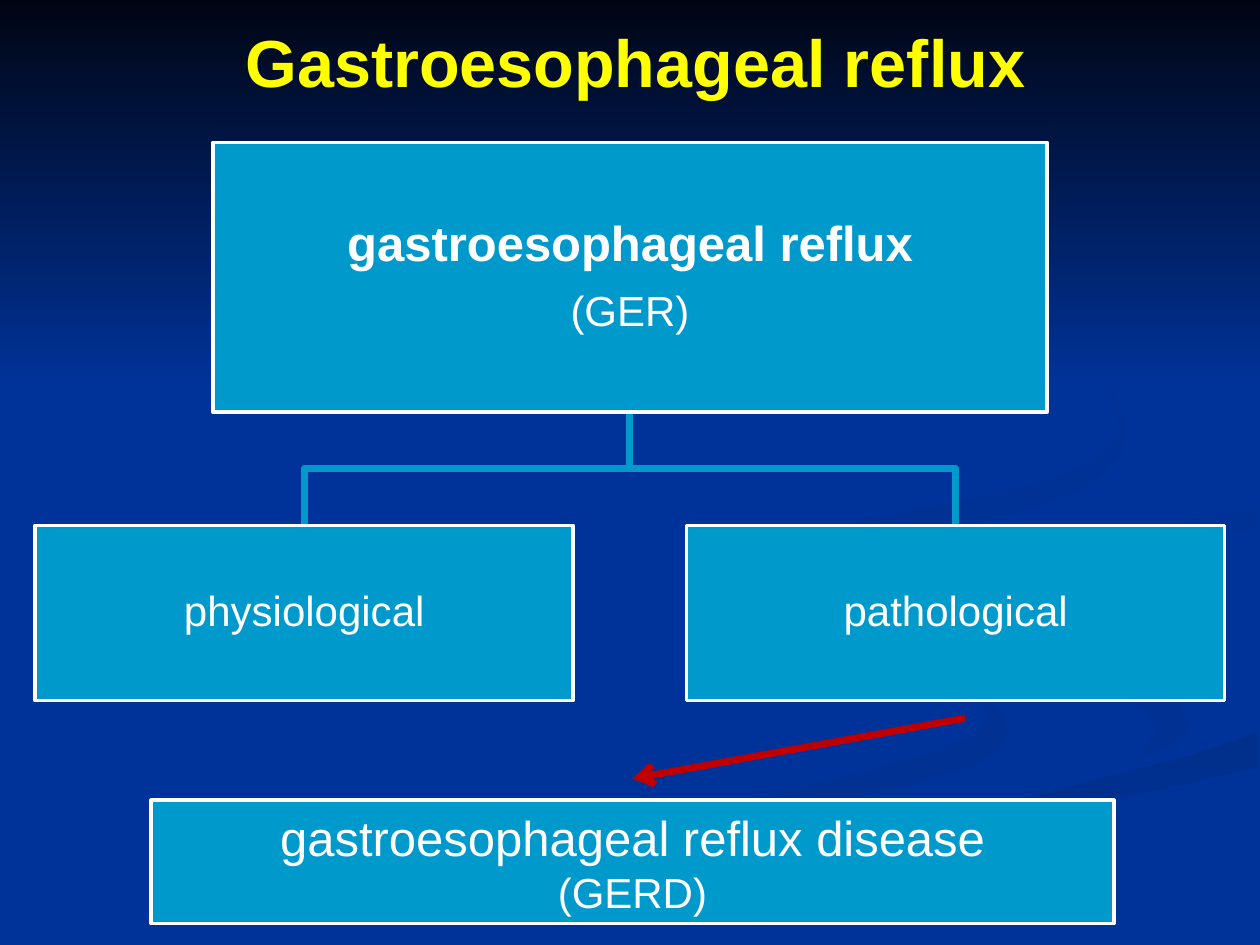
from dataclasses import dataclass

from lxml import etree
from pptx import Presentation
from pptx import util as u
from pptx.dml.color import RGBColor
from pptx.enum import shapes, text
from pptx.oxml.ns import qn


@dataclass(frozen=True)
class Theme:
    font: str = "Arial"
    backdrop: str = "003399"
    box: str = "0099CC"
    light: str = "FFFFFF"
    title: str = "FFFF00"
    arrow: str = "C00000"
    title_size: int = 38
    large: int = 28
    normal: int = 24
    border: int = 2
    thick: int = 4


COLUMNS, ROWS = 100, 75

# Each band: first colour, last colour, angle, outline in columns and rows
BANDS = [
    ("003399", "003193", 0, [
        (78.1, 55.3), (74.5, 53.8), (68.2, 51.9), (62.6, 50.2), (59.4, 48.5),
        (57.6, 46.9), (57.5, 45.9), (57, 47.2), (58.1, 48.4), (61.1, 49.9),
        (67.9, 51.9), (74.1, 53.9), (77.6, 55.3), (78.6, 56.6), (77.4, 58.3),
        (73.9, 59.8), (68.4, 61.3), (57.9, 63.9), (45.8, 67.4), (37.6, 70.7),
        (30, 74.9), (36.1, 74.9), (43.1, 71.4), (53.2, 67.4), (62.3, 64.7),
        (72.1, 62.3), (76.9, 60.9), (79.1, 59.7), (80, 58.1), (79.5, 56.7)]),
    ("003399", "003193", 45, [
        (94.3, 57), (93, 55.3), (90.5, 54), (85, 52.4), (79.2, 50.9),
        (74.5, 49), (72.7, 47.4), (72.4, 46.4), (73.3, 48.8), (75.5, 50.5),
        (79.7, 52.4), (85.4, 53.9), (89.2, 55.3), (91.1, 56.7), (91.8, 58.1),
        (90.7, 59.7), (89.4, 60.5), (92.5, 59.3), (94.1, 58.1)]),
    ("002F8C", "003399", 90, [
        (50.3, 74.9), (57.1, 74.9), (61.4, 72.6), (67, 70.2), (75.2, 67.2),
        (86.1, 64), (99.8, 60.9), (99.8, 58.1), (95, 59.8), (86.7, 62),
        (76.4, 64.7), (66.2, 68.1), (56.9, 71.9), (51.9, 74.7)]),
    ("003091", "003399", 45, [
        (78.1, 46), (78.2, 46.9), (79.7, 48.3), (82.6, 49.6), (80.9, 48.4),
        (80.5, 47.2), (81.6, 45.9), (84.3, 44.8), (89.6, 43.5), (95.4, 42.6),
        (99.8, 42), (99.8, 40.2), (93.3, 41.5), (86.5, 42.4), (81, 43.7)]),
    ("002F8E", "003399", 45, [
        (68.3, 43), (76.4, 41.7), (82.5, 40.2), (86.7, 38.4), (88.9, 36.2),
        (89.3, 33.5), (88, 30.7), (85.4, 28.3), (81, 25.6), (76.2, 23.3),
        (82.6, 26.6), (87, 29.9), (88.8, 32.8), (88.6, 34.8), (86.1, 37),
        (81.8, 38.6), (73.3, 40.4), (64.9, 42), (59.7, 43.7), (57.7, 46.2),
        (59, 48.4), (62.2, 50), (59.7, 48), (59.4, 46.5), (61.4, 44.8)]),
    ("000514", "003399", 90, [(0, 0), (100, 0), (100, 30.8), (0, 30.8)]),
]


class SlideBuilder:
    def __init__(self, deck, theme):
        self.theme = theme
        self.unit_x = deck.slide_width / COLUMNS
        self.unit_y = deck.slide_height / ROWS
        self.slide = deck.slides.add_slide(deck.slide_layouts[5])
        self.shapes = self.slide.shapes

    def point(self, column, row):
        return round(column * self.unit_x), round(row * self.unit_y)

    def area(self, column, row, width, height):
        return *self.point(column, row), *self.point(width, height)

    def outline(self, points, close):
        start, *rest = [self.point(*point) for point in points]
        pen = self.shapes.build_freeform(*start)
        pen.add_line_segments(rest, close=close)
        shape = pen.convert_to_shape()
        shape.shadow.inherit = False
        return shape

    def stroke(self, shape, color, width):
        shape.line.color.rgb = RGBColor.from_string(color)
        shape.line.width = u.Pt(width)

    def background(self, bands):
        fill = self.slide.background.fill
        fill.solid()
        fill.fore_color.rgb = RGBColor.from_string(self.theme.backdrop)
        for first, last, angle, points in bands:
            band = self.outline(points, close=True)
            band.line.fill.background()
            band.fill.gradient()
            band.fill.gradient_angle = -angle % 360
            for stop, color in zip(band.fill.gradient_stops, (first, last)):
                stop.color.rgb = RGBColor.from_string(color)

    def set_text(self, frame, lines, color, tight=False):
        """Fill a frame with (wording, size, bold) lines, centred."""
        frame.word_wrap = True
        frame.auto_size = text.MSO_AUTO_SIZE.NONE
        frame.vertical_anchor = text.MSO_ANCHOR.MIDDLE
        if tight:
            for side in ("left", "right", "top", "bottom"):
                setattr(frame, f"margin_{side}", u.Inches(0.02))
        for index, (wording, size, bold) in enumerate(lines):
            para = frame.add_paragraph() if index else frame.paragraphs[0]
            layout = {"alignment": text.PP_ALIGN.CENTER}
            if tight:
                layout |= {"line_spacing": 0.9, "space_after": u.Pt(round(size * 0.35))}
            for name, value in layout.items():
                setattr(para, name, value)
            span = para.add_run()
            span.text = wording
            style = {"name": self.theme.font, "size": u.Pt(size), "bold": bold}
            for name, value in style.items():
                setattr(span.font, name, value)
            span.font.color.rgb = RGBColor.from_string(color)

    def title(self, wording, *area):
        """Place the title in front of everything drawn so far."""
        title = self.shapes.title
        title.left, title.top, title.width, title.height = self.area(*area)
        tree = title.element.getparent()
        tree.append(title.element)
        self.set_text(title.text_frame, [(wording, self.theme.title_size, True)],
                      self.theme.title)

    def box(self, lines, *area, tight=True):
        box = self.shapes.add_shape(shapes.MSO_SHAPE.RECTANGLE, *self.area(*area))
        box.shadow.inherit = False
        box.fill.solid()
        box.fill.fore_color.rgb = RGBColor.from_string(self.theme.box)
        self.stroke(box, self.theme.light, self.theme.border)
        self.set_text(box.text_frame, lines, self.theme.light, tight)

    def branch(self, start, end):
        """Draw a line going down, across and down again."""
        middle = (start[1] + end[1]) / 2
        points = [start, (start[0], middle), (end[0], middle), end]
        branch = self.outline(points, close=False)
        branch.fill.background()
        self.stroke(branch, self.theme.box, self.theme.thick)

    def arrow(self, start, end):
        arrow = self.shapes.add_connector(
            shapes.MSO_CONNECTOR.STRAIGHT, *self.point(*start), *self.point(*end))
        self.stroke(arrow, self.theme.arrow, self.theme.thick)
        properties = arrow.element.spPr
        etree.SubElement(properties.find(qn("a:ln")), qn("a:tailEnd"), type="arrow")
        etree.SubElement(properties, qn("a:effectLst"))


def main():
    deck = Presentation()
    deck.slide_width, deck.slide_height = u.Inches(10), u.Inches(7.5)
    theme = Theme()
    page = SlideBuilder(deck, theme)
    page.background(BANDS)
    page.title("Gastroesophageal reflux", 2, 1.3, 96.9, 7.1)

    root_top, root_height, child_top = 11.3, 21.4, 41.7
    child_width, child_height = 42.7, 13.9
    children = {"pathological": 54.5, "physiological": 2.8}
    for left in children.values():
        page.branch((50, root_top + root_height), (left + child_width / 2, child_top))
    page.box([("gastroesophageal reflux", theme.large, True),
              ("(GER)", theme.normal, False)], 16.9, root_top, 66.2, root_height)
    for wording, left in children.items():
        page.box([(wording, theme.normal, False)],
                 left, child_top, child_width, child_height)
    page.box([("gastroesophageal reflux disease", theme.large, False),
              ("(GERD)", theme.normal, False)], 12, 63.5, 76.4, 9.8, tight=False)
    page.arrow((76.6, 57), (50.2, 61.8))
    deck.save("out.pptx")


if __name__ == "__main__":
    main()
